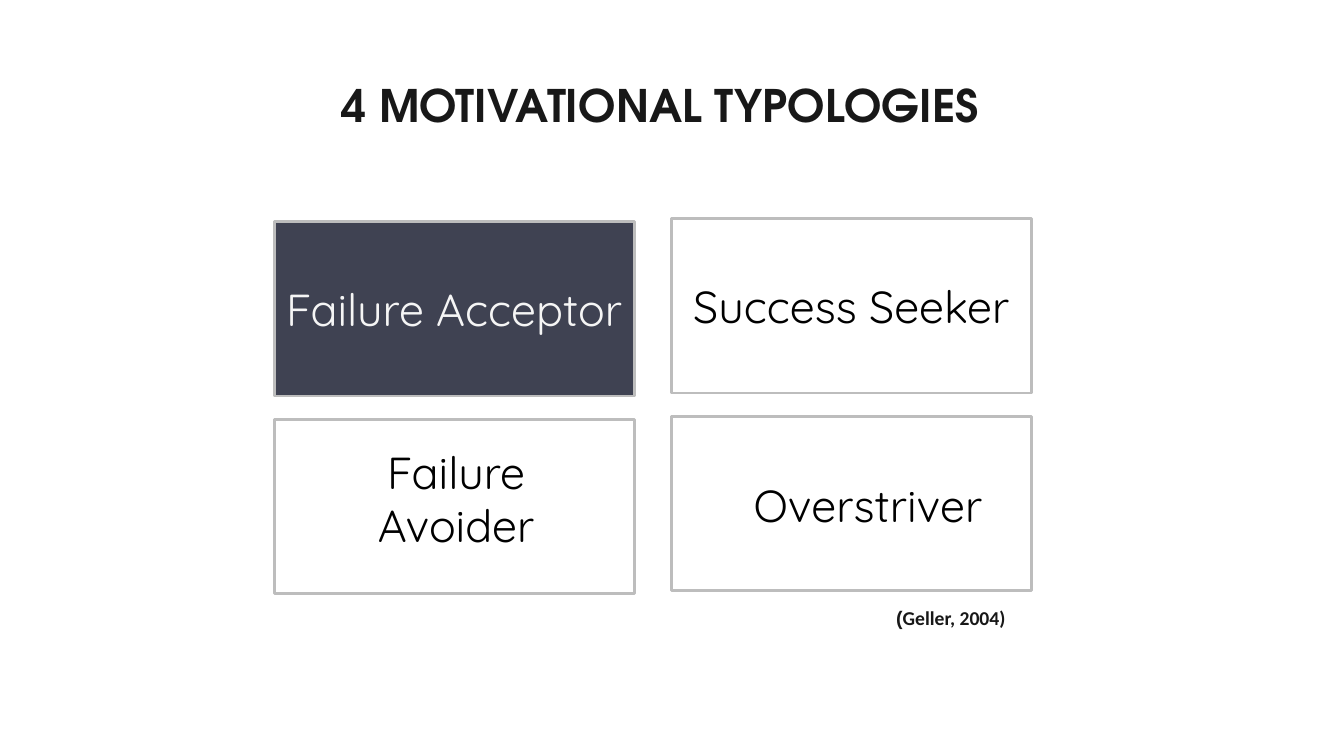
from pptx import Presentation
from pptx import util as u
from pptx.dml.color import RGBColor
from pptx.enum import shapes, text

COLORS = {"ink": "181818", "black": "000000", "pale": "F5F5F5",
          "slate": "3F4252", "border": "BDBDBD"}
CARD_W, CARD_H = 3.57, 1.73
COL_STEP, ROW_STEP, COL_RISE = 3.94, 1.96, 0.03
LINE_H = 0.64


def rgb(name):
    """Return the named palette colour."""
    return RGBColor.from_string(COLORS[name])


def write(tf, words, size, face, color, bold=False, align=text.PP_ALIGN.CENTER):
    """Fill a text frame with one styled paragraph and return it."""
    tf.word_wrap = True
    p = tf.paragraphs[0]
    p.alignment = align
    p.font.size, p.font.name, p.font.bold = u.Pt(size), face, bold
    p.font.color.rgb = rgb(color)
    p.add_run().text = words
    return p


def add_text(slide, box, *style, **options):
    """Place a text box in the given box and return its paragraph."""
    sp = slide.shapes.add_textbox(*map(u.Inches, box))
    return write(sp.text_frame, *style, **options)


def add_card(slide, box):
    """Draw one outlined card without fill."""
    sp = slide.shapes.add_shape(shapes.MSO_SHAPE.RECTANGLE, *map(u.Inches, box))
    sp.shadow.inherit = False
    sp.fill.background()
    sp.line.color.rgb = rgb("border")
    sp.line.width = u.Pt(2)
    return sp


def add_typologies(slide, left, top):
    """Lay out the two-by-two grid of typologies from its top left corner."""
    labels = {(0, 1): ("Success Seeker", 0, 0.55, CARD_W),
              (1, 0): ("Failure Avoider", 0.19, 0.2, 3.23),
              (1, 1): ("Overstriver", 0.5, 0.56, 2.9)}
    for row in range(2):
        for col in range(2):
            x = left + col * COL_STEP
            y = top + row * ROW_STEP - col * COL_RISE
            card = add_card(slide, (x, y, CARD_W, CARD_H))
            if (row, col) in labels:
                words, dx, dy, width = labels[row, col]
                add_text(slide, (x + dx, y + dy, width, LINE_H),
                         words, 32, "Quicksand", "black")
            else:
                card.fill.solid()
                card.fill.fore_color.rgb = rgb("slate")
                card.text_frame.vertical_anchor = text.MSO_ANCHOR.MIDDLE
                write(card.text_frame, "Failure Acceptor", 32, "Quicksand", "pale")


def add_citation(slide, box):
    """Place the source reference under the grid."""
    p = add_text(slide, box, "(", 14, "Arial", "ink", bold=True,
                 align=text.PP_ALIGN.LEFT)
    r = p.add_run()
    r.text = "Geller, 2004)"
    r.font.name = "Calibri"


def main():
    """Build and save the slide."""
    prs = Presentation()
    prs.slide_width, prs.slide_height = u.Inches(13.33), u.Inches(7.5)
    slide = prs.slides.add_slide(prs.slide_layouts[6])
    add_text(slide, (3.04, 0.72, 7.02, LINE_H), "4 MOTIVATIONAL TYPOLOGIES",
             32, "TeX Gyre Adventor", "ink", bold=True)
    add_typologies(slide, 2.72, 2.2)
    add_citation(slide, (8.79, 5.96, 2.27, 0.34))
    prs.save("out.pptx")


if __name__ == "__main__":
    main()
